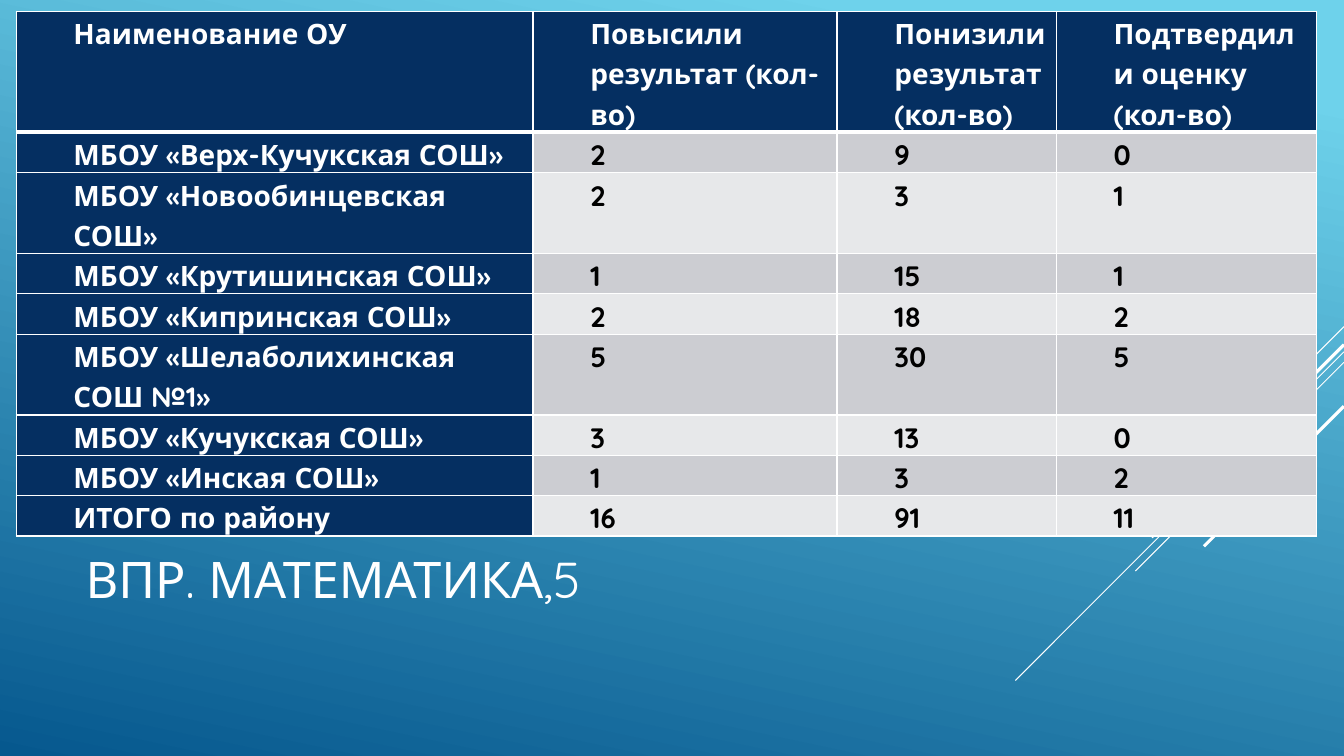
"""Build the slide with the table of grade 5 mathematics test results."""
from typing import NamedTuple

from lxml import etree
from pptx import Presentation
from pptx.dml.color import RGBColor
from pptx.enum import shapes, text
from pptx.oxml import ns
from pptx.util import Pt

FONT = "Quicksand"
WHITE = RGBColor(0xFF, 0xFF, 0xFF)
BLACK = RGBColor(0x00, 0x00, 0x00)
NAVY = RGBColor(0x05, 0x2F, 0x61)
BANDS = (RGBColor(0xCC, 0xCD, 0xD2), RGBColor(0xE7, 0xE8, 0xEA))
SKY = RGBColor(0x6E, 0xD2, 0xEB)
OCEAN = RGBColor(0x06, 0x58, 0x8E)

SLIDE_WIDTH, SLIDE_HEIGHT = 960, 540
COLUMN_WIDTHS = (369.2, 217.2, 156.6, 186.2)
LINE_HEIGHT = 28.85
TABLE_LEFT, TABLE_TOP = 11.5, 8


class Ray(NamedTuple):
    """A diagonal line falling left from the right edge of the slide."""
    top: float
    run: float
    weight: float


class TableRow(NamedTuple):
    """The cell values of a table row and the text lines it must hold."""
    values: tuple
    lines: int = 1


RAYS = (
    Ray(233.3, 72, 0.75),
    Ray(251.3, 234.7, 0.75),
    Ray(258.8, 149, 0.75),
    Ray(246.2, 137.5, 2.25),
    Ray(290.2, 100, 2.25),
)
ROWS = (
    TableRow(("Наименование ОУ", "Повысили результат (кол-во)",
              "Понизили результат\n(кол-во)", "Подтвердили оценку\n(кол-во)"), lines=3),
    TableRow(("МБОУ «Верх-Кучукская СОШ»", 2, 9, 0)),
    TableRow(("МБОУ «Новообинцевская СОШ»", 2, 3, 1), lines=2),
    TableRow(("МБОУ «Крутишинская СОШ»", 1, 15, 1)),
    TableRow(("МБОУ «Кипринская СОШ»", 2, 18, 2)),
    TableRow(("МБОУ «Шелаболихинская СОШ №1»", 5, 30, 5), lines=2),
    TableRow(("МБОУ «Кучукская СОШ»", 3, 13, 0)),
    TableRow(("МБОУ «Инская СОШ»", 1, 3, 2)),
    TableRow(("ИТОГО по району", 16, 91, 11)),
)


def write_text(frame, content: str, *, size: float, color: RGBColor,
               bold: bool = False, spacing: float = 1, indent: float = 0) -> None:
    """Fill a text frame, one paragraph for each line of the content."""
    frame.word_wrap = True
    frame.text = content
    for paragraph in frame.paragraphs:
        paragraph.alignment = text.PP_ALIGN.LEFT
        paragraph.line_spacing = spacing
        paragraph._p.get_or_add_pPr().set("marL", str(Pt(indent)))
        for run in paragraph.runs:
            run.font.name = FONT
            run.font.size = Pt(size)
            run.font.bold = bold
            run.font.color.rgb = color


def paint_background(slide) -> None:
    """Give the slide its blue gradient."""
    fill = slide.background.fill
    fill.gradient()
    fill.gradient_angle = 258
    for stop, color, position in zip(fill.gradient_stops, (SKY, OCEAN), (0.1, 1)):
        stop.color.rgb = color
        stop.position = position


def draw_ray(slide, ray: Ray) -> None:
    """Draw one diagonal line without a shadow."""
    connector = slide.shapes.add_connector(
        shapes.MSO_CONNECTOR.STRAIGHT, Pt(SLIDE_WIDTH), Pt(ray.top),
        Pt(SLIDE_WIDTH - ray.run), Pt(ray.top + ray.run))
    connector.line.color.rgb = WHITE
    connector.line.width = Pt(ray.weight)
    etree.SubElement(connector._element.spPr, ns.qn("a:effectLst"))


def draw_title(slide) -> None:
    """Place the title below the table."""
    frame = slide.shapes.add_textbox(Pt(54), Pt(353.5), Pt(672), Pt(119)).text_frame
    frame.vertical_anchor = text.MSO_ANCHOR.MIDDLE
    write_text(frame, "ВПР. МАТЕМАТИКА,5", size=36, color=WHITE)


def set_borders(cell, *, top: float, bottom: float) -> None:
    """Outline a cell in white with the given top and bottom weights."""
    properties = cell._tc.get_or_add_tcPr()
    for side, weight in (("L", 1), ("R", 1), ("T", top), ("B", bottom)):
        line = etree.SubElement(properties, ns.qn(f"a:ln{side}"), w=str(Pt(weight)))
        fill = etree.SubElement(line, ns.qn("a:solidFill"))
        etree.SubElement(fill, ns.qn("a:srgbClr"), val=str(WHITE))


def draw_table(slide) -> None:
    """Draw the results with a navy heading row and a navy first column."""
    height = LINE_HEIGHT * sum(row.lines for row in ROWS)
    table = slide.shapes.add_table(
        len(ROWS), len(COLUMN_WIDTHS), Pt(TABLE_LEFT), Pt(TABLE_TOP),
        Pt(sum(COLUMN_WIDTHS)), Pt(height)).table
    for column, width in zip(table.columns, COLUMN_WIDTHS):
        column.width = Pt(width)
    for row_index, row in enumerate(ROWS):
        table.rows[row_index].height = Pt(LINE_HEIGHT * row.lines)
        for column_index, value in enumerate(row.values):
            cell = table.cell(row_index, column_index)
            navy = row_index == 0 or column_index == 0
            cell.margin_left = cell.margin_right = Pt(5)
            cell.margin_top = cell.margin_bottom = Pt(0)
            set_borders(cell, top=3 if row_index == 1 else 1,
                        bottom=3 if row_index == 0 else 1)
            cell.fill.solid()
            cell.fill.fore_color.rgb = NAVY if navy else BANDS[(row_index - 1) % 2]
            write_text(cell.text_frame, str(value), size=20, bold=True,
                       color=WHITE if navy else BLACK, spacing=1.15, indent=36)


def main() -> None:
    """Assemble and save the presentation."""
    presentation = Presentation()
    presentation.slide_width = Pt(SLIDE_WIDTH)
    presentation.slide_height = Pt(SLIDE_HEIGHT)
    slide = presentation.slides.add_slide(presentation.slide_layouts[6])
    paint_background(slide)
    for ray in RAYS:
        draw_ray(slide, ray)
    draw_title(slide)
    draw_table(slide)
    presentation.save("out.pptx")


if __name__ == "__main__":
    main()
